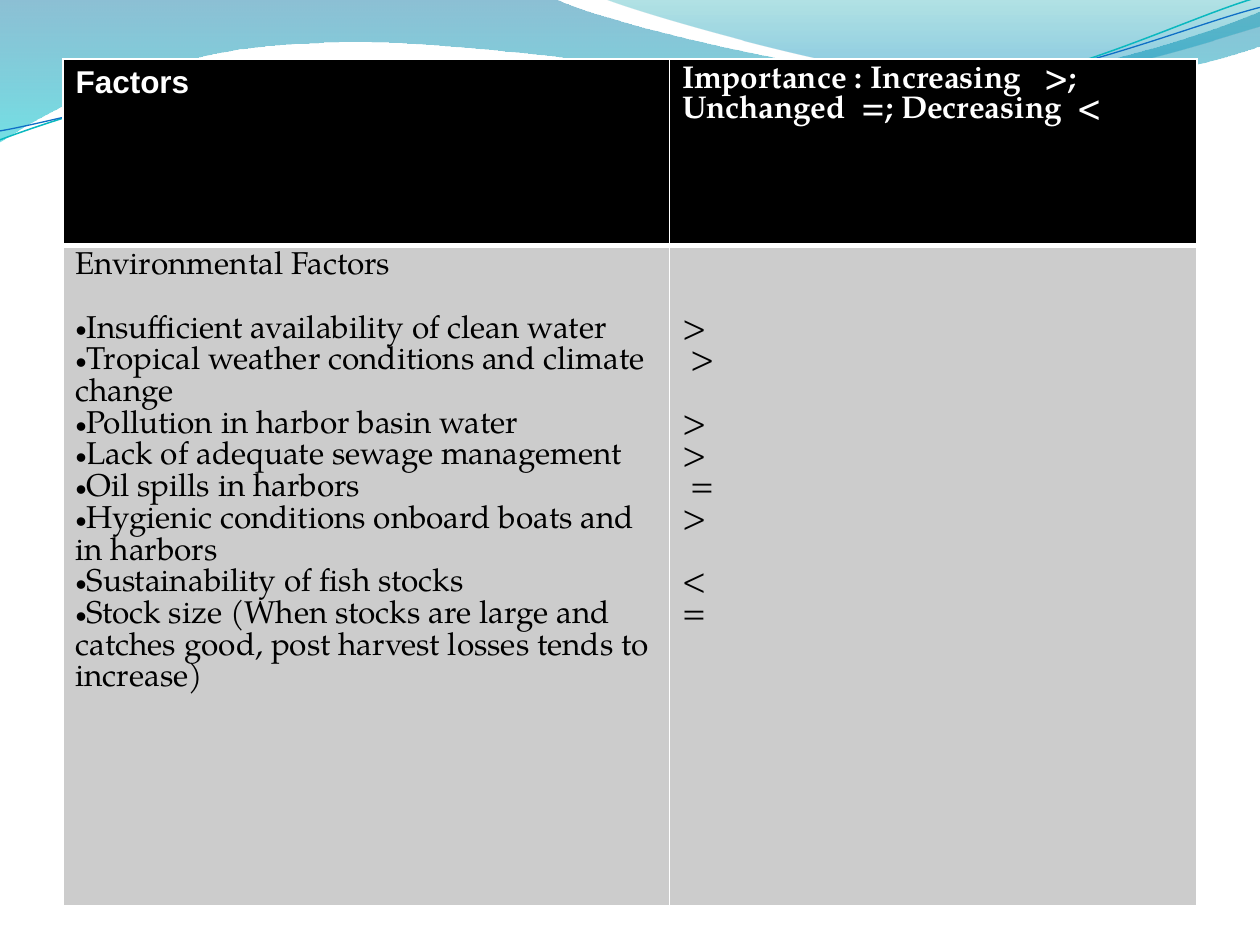
from lxml import etree
from pptx import Presentation
from pptx.dml.color import RGBColor
from pptx.oxml import ns
from pptx.util import Cm, Pt

HUES = {"ink": "000000", "paper": "FFFFFF", "body": "CCCCCC",
        "sea": "0074A1", "aqua": "00C6CF", "teal": "00A1A9",
        "sky": "008BBF", "cyan": "0AB8BF", "blue": "0F6FC6"}
SERIF = "TeX Gyre Pagella"
PITCH = Pt(18.1)

WAVES = [
    ([(0, 0), (11.18, -0.03),
      (12.09, 0.43, 16.87, 1.6, 19.25, 1.6),
      (21.67, 1.6, 24.33, 0.66, 25.4, 0.23), (25.43, 0.91),
      (24.97, 1.12, 22.1, 1.93, 18.95, 1.91),
      (15.8, 1.91, 9.7, 0.71, 6.53, 0.86),
      (3.28, 0.91, 1.17, 2.11, -0.03, 2.87), (0, 0)],
     [(0, "sea", 45), (1, "aqua", 55)]),
    ([(12.17, -0.03),
      (12.93, 0.28, 17.32, 1.57, 19.53, 1.65),
      (21.74, 1.75, 24.41, 0.81, 25.4, 0.53), (25.4, 0), (12.17, -0.03)],
     [(0, "teal", 30), (0.8, "sky", 45)]),
]
STRANDS = [
    ([(0, 2.82), (1.22, 2.36, 4.01, 1.45, 7.04, 1.32),
      (10.03, 1.19, 15.06, 2.26, 18.11, 2.03),
      (21.16, 1.8, 23.83, 0.38, 25.35, -0.05)], "cyan", 0.85),
    ([(0, 2.64), (1.19, 2.44, 4.17, 1.55, 7.19, 1.42),
      (10.24, 1.3, 15.16, 2.13, 18.21, 1.91),
      (21.23, 1.7, 23.9, 0.53, 25.4, 0.15)], "blue", 0.75),
]
ISSUES = [
    ("Insufficient availability of clean water", ">", 1),
    ("Tropical weather conditions and climate change", " >", 2),
    ("Pollution in harbor basin water", ">", 1),
    ("Lack of adequate sewage management", ">", 1),
    ("Oil spills in harbors", " =", 1),
    ("Hygienic conditions onboard boats and in harbors", ">", 2),
    ("Sustainability of fish stocks", "<", 1),
    ("Stock size (When stocks are large and catches good, "
     "post harvest losses tends to increase)", "=", 3),
]


def hue(name):
    """Return the named colour."""
    return RGBColor.from_string(HUES[name])


def add(parent, tag, **attrs):
    """Append a DrawingML child and return it."""
    return etree.SubElement(parent, ns.qn("a:" + tag), attrs)


def outline(slide, box, steps, close):
    """Draw corners and cubic curves relative to the box."""
    left, top = box
    points = [(Cm(left + x), Cm(top + y)) for step in steps
              for x, y in zip(step[::2], step[1::2])]
    pen = slide.shapes.build_freeform(*points[0], scale=1.0)
    pen.add_line_segments(points[1:], close=close)
    shape = pen.convert_to_shape()
    shape.shadow.inherit = False
    lines = iter(list(shape.element.spPr.iter(ns.qn("a:lnTo"))))
    for step in steps[1:]:
        line = next(lines)
        if len(step) == 6:
            curve = etree.Element(ns.qn("a:cubicBezTo"))
            line.addprevious(curve)
            for part in (line, next(lines), next(lines)):
                curve.append(part[0])
                part.getparent().remove(part)
    return shape


def banner(slide, box):
    """Draw the tinted waves and thin strands along the top."""
    for steps, tints in WAVES:
        wave = outline(slide, box, steps, True)
        wave.line.fill.background()
        wave.fill.gradient()
        wave.fill.gradient_angle = 270
        for stop, (place, name, _) in zip(wave.fill.gradient_stops, tints):
            stop.position = place
            stop.color.rgb = hue(name)
        tags = wave.element.spPr.iter(ns.qn("a:srgbClr"))
        for tag, (_, _, alpha) in zip(list(tags), tints):
            add(tag, "alpha", val=str(alpha * 1000))
    for steps, name, width in STRANDS:
        strand = outline(slide, box, steps, False)
        strand.fill.background()
        strand.line.color.rgb = hue(name)
        strand.line.width = Pt(width)


def frame(cell, fill, top, base):
    """Give a cell its white borders and its fill."""
    props = cell._tc.get_or_add_tcPr()
    for side, width in zip("LRTB", (1, 1, top, base)):
        edge = add(props, "ln" + side, w=str(Pt(width)))
        add(add(edge, "solidFill"), "srgbClr", val=HUES["paper"])
    cell.fill.solid()
    cell.fill.fore_color.rgb = hue(fill)


def write(cell, lines, color, bold=False, face=SERIF, pitch=PITCH):
    """Fill a cell with evenly set paragraphs and return them."""
    cell.text = "\n".join(lines)
    paras = cell.text_frame.paragraphs
    for para in paras:
        para.line_spacing = pitch
        para.font.name = face
        para.font.size = Pt(18)
        para.font.bold = bold
        para.font.color.rgb = hue(color)
    return paras


def bullet(para):
    """Put a round bullet directly before a paragraph."""
    props = para._p.get_or_add_pPr()
    props.set("marL", "0")
    props.set("indent", "0")
    rest = props.find(ns.qn("a:defRPr"))
    rest.addprevious(etree.Element(ns.qn("a:buFont"), typeface="Arial"))
    rest.addprevious(etree.Element(ns.qn("a:buChar"), char="•"))


def factors(slide, box):
    """Place the table of factors and their importance."""
    left, top, width, height = map(Cm, box)
    table = slide.shapes.add_table(2, 2, left, top, width, height).table
    table.horz_banding = False
    table.columns[0].width = Cm(12.23)
    table.columns[1].width = width - Cm(12.23)
    table.rows[0].height = Cm(3.76)
    table.rows[1].height = height - Cm(3.76)
    for col in (0, 1):
        frame(table.cell(0, col), "ink", 1, 3)
        frame(table.cell(1, col), "body", 3, 1)

    write(table.cell(0, 0), ["Factors"], "paper", True, "Arial", 1.0)
    write(table.cell(0, 1), ["Importance : Increasing   >;",
                             "Unchanged  =; Decreasing  <"],
          "paper", True, pitch=1.0)

    names, marks, spans = zip(*ISSUES)
    paras = write(table.cell(1, 0), ["Environmental Factors", *names], "ink")
    paras[0].space_after = PITCH
    for para in paras[1:]:
        bullet(para)
    signs = table.cell(1, 1)
    signs.margin_top = Cm(0.13) + 2 * PITCH
    for para, span in zip(write(signs, marks, "ink"), spans):
        para.space_after = (span - 1) * PITCH


def main():
    """Build and save the slide."""
    deck = Presentation()
    deck.slide_width, deck.slide_height = Cm(25.4), Cm(19.05)
    slide = deck.slides.add_slide(deck.slide_layouts[6])
    banner(slide, (0, 0))
    factors(slide, (1.27, 1.19, 22.86, 17.07))
    deck.save("out.pptx")


if __name__ == "__main__":
    main()
